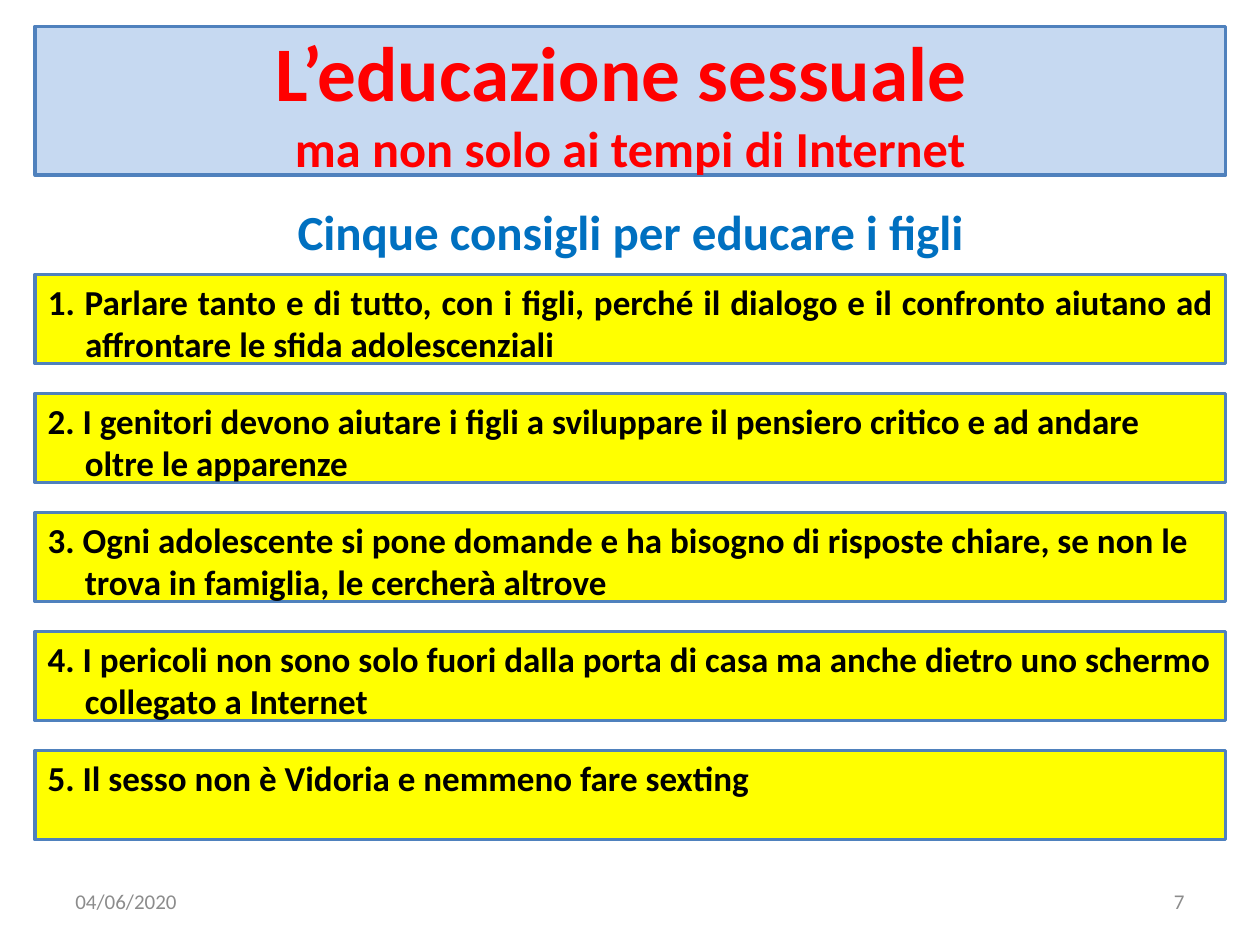
from pptx import Presentation
from pptx.dml.color import RGBColor
from pptx.enum.shapes import MSO_SHAPE
from pptx.enum.text import MSO_ANCHOR, MSO_AUTO_SIZE, PP_ALIGN
from pptx.util import Cm, Pt

RECT = MSO_SHAPE.RECTANGLE
TOP, MIDDLE = MSO_ANCHOR.TOP, MSO_ANCHOR.MIDDLE
LEFT, CENTER, RIGHT, JUSTIFY = PP_ALIGN.LEFT, PP_ALIGN.CENTER, PP_ALIGN.RIGHT, PP_ALIGN.JUSTIFY
NO_AUTOFIT = MSO_AUTO_SIZE.NONE

PALE_BLUE = RGBColor(0xC6, 0xD9, 0xF1)
BORDER_BLUE = RGBColor(0x4F, 0x81, 0xBD)
HEADING_BLUE = RGBColor(0x00, 0x70, 0xC0)
RED = RGBColor(0xFF, 0x00, 0x00)
YELLOW = RGBColor(0xFF, 0xFF, 0x00)
BLACK = RGBColor(0x00, 0x00, 0x00)
GREY = RGBColor(0x8C, 0x8C, 0x8C)

X, WIDTH = Cm(0.71), Cm(24)
HANGING = Cm(0.75)


def format_box(sp, top, height, fill, anchor):
    sp.left, sp.top, sp.width, sp.height = X, top, WIDTH, height
    sp.fill.solid()
    sp.fill.fore_color.rgb = fill
    sp.line.color.rgb = BORDER_BLUE
    sp.line.width = Pt(2)
    tf = sp.text_frame
    tf.word_wrap = True
    tf.auto_size = NO_AUTOFIT
    tf.vertical_anchor = anchor


def format_text(p, size, color, align, bold=True):
    p.alignment = align
    p.font.name = "Calibri"
    p.font.size = Pt(size)
    p.font.bold = bold
    p.font.color.rgb = color


prs = Presentation()
prs.slide_width, prs.slide_height = Cm(25.4), Cm(19.05)
s = prs.slides.add_slide(prs.slide_layouts[0])

# Title
title = s.shapes.title
format_box(title, Cm(0.53), Cm(3), PALE_BLUE, MIDDLE)
p = title.text_frame.paragraphs[0]
format_text(p, 44.1, RED, CENTER)
p.add_run().text = "L’educazione sessuale "
p.add_line_break()
r = p.add_run()
r.text = "ma non solo ai tempi di Internet"
r.font.size = Pt(28.8)

# Heading, date and slide number
labels = [
    ("Cinque consigli per educare i figli", X, Cm(3.94), WIDTH, Cm(1.45), 28, HEADING_BLUE, CENTER, True, TOP),
    ("04/06/2020", Cm(1.27), Cm(17.65), Cm(5.92), Cm(1.02), 12, GREY, LEFT, False, MIDDLE),
    ("7", Cm(18.21), Cm(17.65), Cm(5.92), Cm(1.02), 12, GREY, RIGHT, False, MIDDLE),
]
for text, left, top, width, height, size, color, align, bold, anchor in labels:
    tf = s.shapes.add_textbox(left, top, width, height).text_frame
    tf.word_wrap = True
    tf.vertical_anchor = anchor
    tf.text = text
    format_text(tf.paragraphs[0], size, color, align, bold)

# Five pieces of advice, the first in the subtitle placeholder
advice = [
    "1. Parlare tanto e di tutto, con i figli, perché il dialogo e il confronto aiutano ad affrontare le sfida adolescenziali",
    "2. I genitori devono aiutare i figli a sviluppare il pensiero critico e ad andare oltre le apparenze",
    "3. Ogni adolescente si pone domande e ha bisogno di risposte chiare, se non le trova in famiglia, le cercherà altrove",
    "4. I pericoli non sono solo fuori dalla porta di casa ma anche dietro uno schermo collegato a Internet",
    "5. Il sesso non è Vidoria e nemmeno fare sexting",
]
for i, text in enumerate(advice):
    if i == 0:
        sp = s.placeholders[1]
    else:
        sp = s.shapes.add_shape(RECT, X, 0, WIDTH, 0)
        sp.shadow.inherit = False
    format_box(sp, Cm(5.53 + 2.4 * i), Cm(1.8), YELLOW, TOP)
    sp.text_frame.text = text
    p = sp.text_frame.paragraphs[0]
    format_text(p, 20, BLACK, JUSTIFY if i == 0 else LEFT)
    p.space_before = Pt(4)
    pPr = p._p.get_or_add_pPr()
    pPr.set("marL", str(HANGING))
    pPr.set("indent", str(-HANGING))

prs.save("out.pptx")
